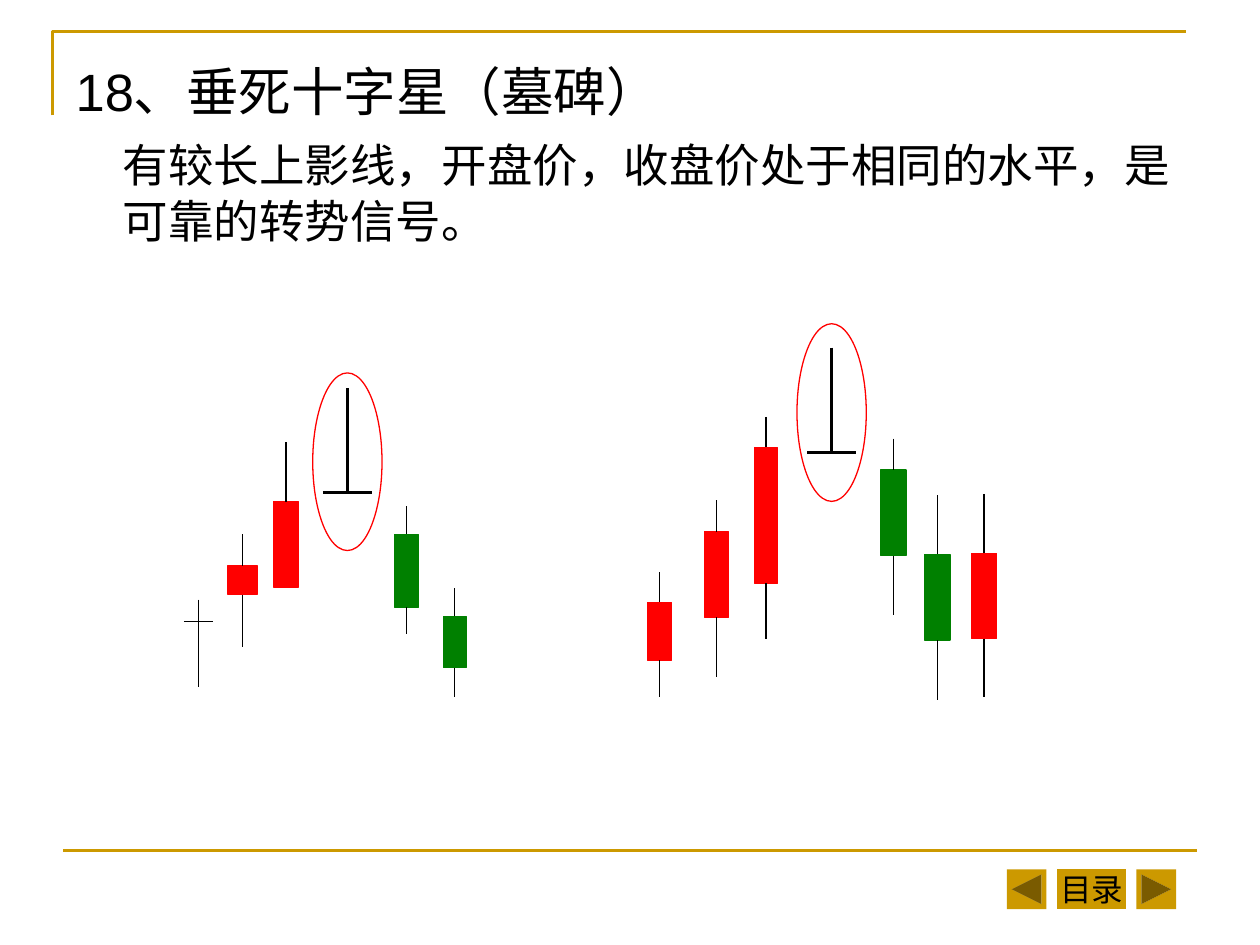
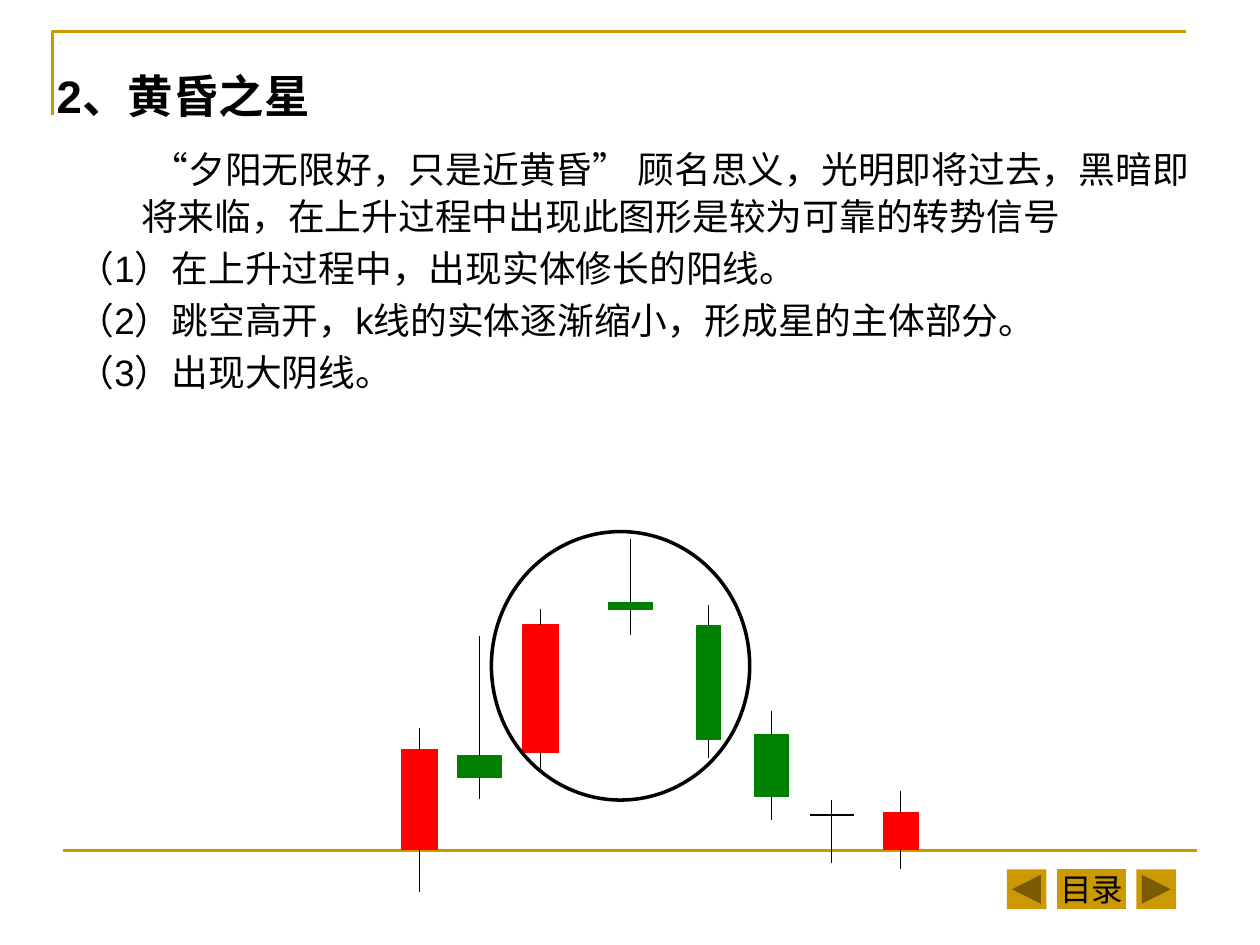
from lxml.etree import SubElement
from pptx import Presentation
from pptx.dml.color import RGBColor
from pptx.enum.shapes import MSO_CONNECTOR, MSO_SHAPE
from pptx.enum.text import MSO_ANCHOR, MSO_AUTO_SIZE, PP_ALIGN
from pptx.oxml.ns import qn
from pptx.util import Pt

GOLD = "CC9900"
RED = "FF0000"
GREEN = "008000"
BLACK = "000000"
WHITE = "FFFFFF"
LATIN_FONT = "Arial"
ASIAN_FONT = "Noto Sans CJK SC"


def colour(hex_string):
    return RGBColor.from_string(hex_string)


def write_paragraph(paragraph, text, size, bold=False, align=PP_ALIGN.LEFT,
                    line_height=None, before=0, margin=0, indent=0):
    paragraph.alignment = align
    paragraph.space_before = Pt(before)
    if line_height:
        paragraph.line_spacing = Pt(line_height)
    properties = paragraph._p.get_or_add_pPr()
    properties.set("marL", str(Pt(margin)))
    properties.set("indent", str(Pt(indent)))
    SubElement(properties, qn("a:buNone"))
    run = paragraph.add_run()
    run.text = text
    run.font.size = Pt(size)
    run.font.bold = bold
    run.font.color.rgb = colour(BLACK)
    run.font.name = LATIN_FONT
    SubElement(run._r.get_or_add_rPr(), qn("a:ea"), typeface=ASIAN_FONT)


def place_placeholder(placeholder, left, top, width, height):
    placeholder.left, placeholder.top = Pt(left), Pt(top)
    placeholder.width, placeholder.height = Pt(width), Pt(height)
    frame = placeholder.text_frame
    frame.word_wrap = True
    frame.auto_size = MSO_AUTO_SIZE.NONE
    frame.vertical_anchor = MSO_ANCHOR.TOP
    return frame


def add_title(slide, text, left, top, **text_format):
    frame = place_placeholder(slide.shapes.title, left, top, 648, 42)
    write_paragraph(frame.paragraphs[0], text, **text_format)


def add_body(slide, paragraphs, left, top, width, height):
    frame = place_placeholder(slide.placeholders[1], left, top, width, height)
    for index, (text, text_format) in enumerate(paragraphs):
        paragraph = frame.add_paragraph() if index else frame.paragraphs[0]
        write_paragraph(paragraph, text, **text_format)


def style_shape(shape, fill=None, line=None, weight=0.75):
    shape.shadow.inherit = False
    if fill:
        shape.fill.solid()
        shape.fill.fore_color.rgb = colour(fill)
    else:
        shape.fill.background()
    if line:
        shape.line.color.rgb = colour(line)
        shape.line.width = Pt(weight)
    else:
        shape.line.fill.background()


def add_figure(slide, kind, left, top, width, height, **style):
    shape = slide.shapes.add_shape(kind, Pt(left), Pt(top), Pt(width), Pt(height))
    style_shape(shape, **style)
    return shape


def add_line(slide, x1, y1, x2, y2, line=BLACK, weight=0.75):
    connector = slide.shapes.add_connector(
        MSO_CONNECTOR.STRAIGHT, Pt(x1), Pt(y1), Pt(x2), Pt(y2))
    connector.line.color.rgb = colour(line)
    connector.line.width = Pt(weight)
    SubElement(connector.element.spPr, qn("a:effectLst"))
    return connector


def add_candle(slide, fill, left, width, top, bottom, high, low=None):
    centre = left + width / 2
    add_figure(slide, MSO_SHAPE.RECTANGLE, left, top, width, bottom - top,
               fill=fill, line=fill)
    add_line(slide, centre, high, centre, top)
    if low:
        add_line(slide, centre, bottom, centre, low)


def add_doji(slide, centre, width, high, low, level, weight=0.75):
    add_line(slide, centre, high, centre, low, weight=weight)
    add_line(slide, centre - width / 2, level, centre + width / 2, level, weight=weight)


def add_gravestone(slide, centre, oval_top, high, level):
    add_figure(slide, MSO_SHAPE.OVAL, centre - 19.8, oval_top, 39.6, 101.5,
               fill=WHITE, line=RED)
    add_doji(slide, centre, 28, high, level, level, weight=2)


def add_corner(slide):
    builder = slide.shapes.build_freeform(30.2, 66.2, scale=Pt(1))
    builder.add_line_segments([(30.2, 18), (678.2, 18)], close=False)
    corner = builder.convert_to_shape()
    style_shape(corner, line=GOLD, weight=1.5)
    return corner


def move_frame_to_layout(slide, layout):
    for placeholder in list(layout.placeholders)[2:]:
        layout.shapes.element.remove(placeholder.element)
    contents = add_figure(slide, MSO_SHAPE.ACTION_BUTTON_CUSTOM,
                          604.1, 496.8, 39.6, 22.7, fill=GOLD)
    contents.text_frame.word_wrap = False
    contents.text_frame.vertical_anchor = MSO_ANCHOR.MIDDLE
    write_paragraph(contents.text_frame.paragraphs[0], "目录", 18, align=PP_ALIGN.CENTER)
    frame_shapes = [
        add_corner(slide),
        add_line(slide, 36, 486, 684, 486, line=GOLD, weight=1.5),
        contents,
        add_figure(slide, MSO_SHAPE.ACTION_BUTTON_BACK_OR_PREVIOUS,
                   575.3, 496.8, 22.7, 22.7, fill=GOLD),
        add_figure(slide, MSO_SHAPE.ACTION_BUTTON_FORWARD_OR_NEXT,
                   649.4, 496.8, 22.7, 22.7, fill=GOLD),
    ]
    for shape in frame_shapes:
        layout.shapes.element.append(shape.element)


def build_gravestone_slide(slide):
    add_title(slide, "18、垂死十字星（墓碑）", 36, 30, size=30, line_height=36)
    explanation = "有较长上影线，开盘价，收盘价处于相同的水平，是可靠的转势信号。"
    add_body(slide, [(explanation, dict(size=26, line_height=32, margin=27))],
             36, 74, 648, 400)
    candles = [
        (RED, 130.3, 16.6, 323.3, 339.8, 305.3, 370),
        (RED, 156.2, 14.4, 286.6, 335.5, 252.7),
        (GREEN, 225.4, 13.7, 305.3, 347, 289.4, 362.2),
        (GREEN, 253.4, 13, 352.1, 381.6, 336.2, 398.2),
        (RED, 370.1, 13.7, 344.2, 377.3, 326.9, 398.2),
        (RED, 402.5, 13.7, 303.8, 352.8, 285.8, 386.6),
        (RED, 431.3, 13, 255.6, 333.4, 238.3, 365),
        (GREEN, 503.3, 14.4, 268.6, 317.5, 250.6, 351.4),
        (GREEN, 528.5, 14.4, 316.8, 365.8, 283, 400.3),
        (RED, 555.1, 14.4, 316.1, 365, 282.2, 398.2),
    ]
    add_doji(slide, 113.4, 16.6, 342.7, 392.4, 355)
    for candle in candles:
        add_candle(slide, *candle)
    add_gravestone(slide, 198.5, 213.1, 221.8, 281.5)
    add_gravestone(slide, 475.2, 185, 198.7, 258.5)


def build_evening_star_slide(slide):
    add_title(slide, "2、黄昏之星", 25.2, 34.4, size=26, bold=True, line_height=32)
    introduction = ("“夕阳无限好，只是近黄昏” 顾名思义，光明即将过去，黑暗即将来临，"
                    "在上升过程中出现此图形是较为可靠的转势信号")
    conditions = [
        "（1）在上升过程中，出现实体修长的阳线。",
        "（2）跳空高开，k线的实体逐渐缩小，形成星的主体部分。",
        "（3）出现大阴线。",
    ]
    shared = dict(size=21, line_height=27)
    paragraphs = [(introduction, dict(shared, margin=48.2, indent=6))]
    paragraphs += [(text, dict(shared, margin=12, before=2.7)) for text in conditions]
    add_body(slide, paragraphs, 25.2, 78.4, 674.6, 400)
    candles = [
        (RED, 229.7, 20.2, 428.4, 485.3, 416.2, 509.8),
        (GREEN, 261.4, 25.2, 432, 444.2, 363.6, 456.5),
        (RED, 298.8, 20.2, 357.1, 429.8, 347.8, 439.9),
        (GREEN, 347.8, 25.2, 344.2, 348.5, 308.2, 362.9),
        (GREEN, 398.2, 13.7, 357.8, 422.6, 345.6, 433.4),
        (GREEN, 431.3, 19.4, 419.8, 455, 406.1, 468.7),
        (RED, 504.7, 20.2, 464.4, 485.3, 452.2, 496.8),
    ]
    for candle in candles:
        add_candle(slide, *candle)
    add_doji(slide, 475.2, 25.2, 457.2, 493.2, 465.8)
    add_figure(slide, MSO_SHAPE.OVAL, 280.8, 303.8, 147.6, 153.4, line=BLACK, weight=2)


def main():
    presentation = Presentation()
    presentation.slide_width, presentation.slide_height = Pt(720), Pt(540)
    layout = presentation.slide_layouts[1]
    gravestone_slide = presentation.slides.add_slide(layout)
    evening_star_slide = presentation.slides.add_slide(layout)
    move_frame_to_layout(gravestone_slide, layout)
    build_gravestone_slide(gravestone_slide)
    build_evening_star_slide(evening_star_slide)
    presentation.save("out.pptx")


if __name__ == "__main__":
    main()
